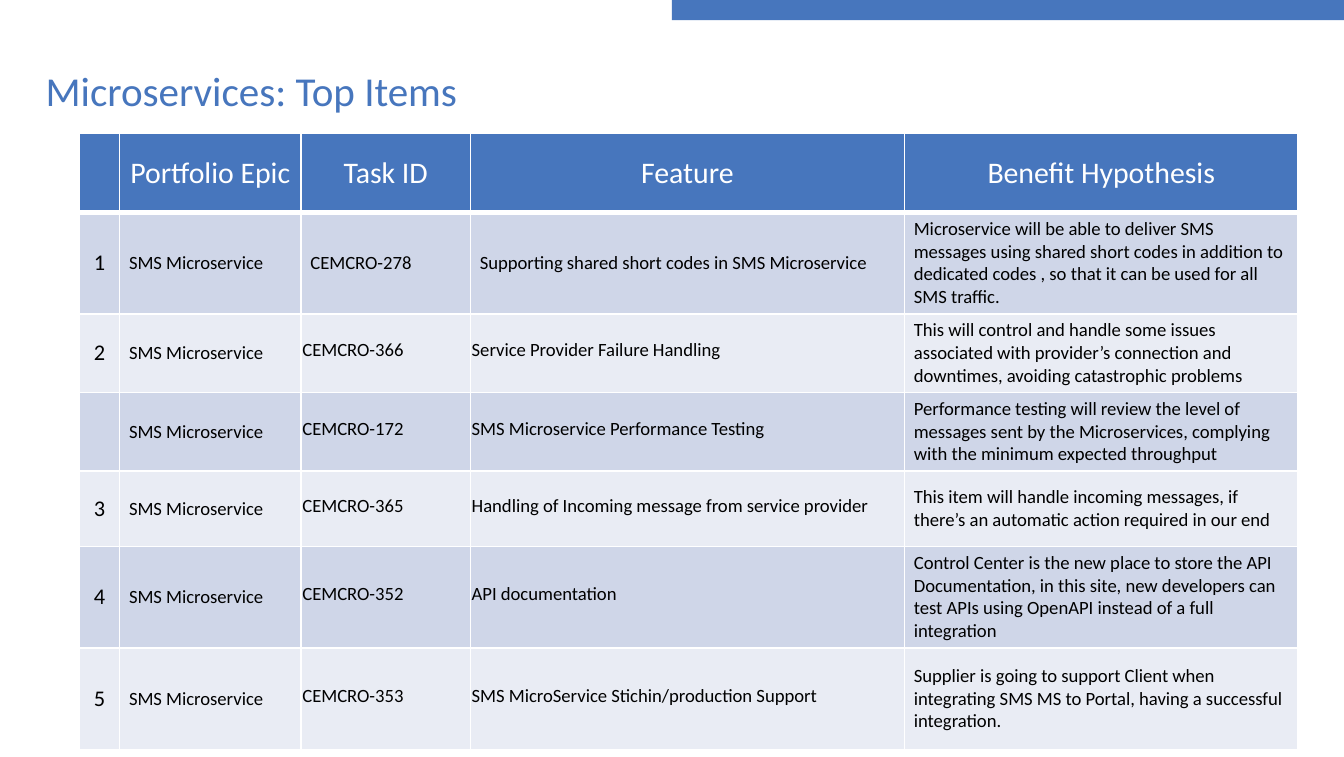
from lxml.etree import SubElement
from pptx import Presentation
from pptx.dml.color import RGBColor
from pptx.enum.shapes import MSO_SHAPE as SHAPE
from pptx.enum.text import MSO_ANCHOR as ANCHOR, PP_ALIGN as ALIGN
from pptx.oxml.ns import qn
from pptx.util import Inches, Pt

COLORS = {
    "blue": "4776BD",
    "band_dark": "CFD6E8",
    "band_light": "E9ECF4",
    "white": "FFFFFF",
    "black": "000000",
}
COLUMN_WIDTHS = [0.3, 1.35, 1.26, 3.23, 2.93]
ROW_HEIGHTS = [0.59, 0.56, 0.56, 0.56, 0.56, 0.61, 0.76]
NORMAL_INSETS = (0.07, 0.04, 0.07, 0.04)
TIGHT_INSETS = (0.01, 0.01, 0.01, 0.05)

EPIC = "SMS Microservice"
HEADER = ["", "Portfolio Epic", "Task ID", "Feature", "Benefit Hypothesis"]
ITEMS = [
    ("1", "CEMCRO-278", "Supporting shared short codes in SMS Microservice",
     "Microservice will be able to deliver SMS messages using shared short codes "
     "in addition to dedicated codes , so that it can be used for all SMS traffic."),
    ("2", "CEMCRO-366", "Service Provider Failure Handling",
     "This will control and handle some issues associated with provider’s "
     "connection and downtimes, avoiding catastrophic problems"),
    ("", "CEMCRO-172", "SMS Microservice Performance Testing",
     "Performance testing will review the level of messages sent by the "
     "Microservices, complying with the minimum expected throughput"),
    ("3", "CEMCRO-365", "Handling of Incoming message from service provider",
     "This item will handle incoming messages, if there’s an automatic action "
     "required in our end"),
    ("4", "CEMCRO-352", "API documentation",
     "Control Center is the new place to store the API Documentation, in this "
     "site, new developers can test APIs using OpenAPI instead of a full integration"),
    ("5", "CEMCRO-353", "SMS MicroService Stichin/production Support",
     "Supplier is going to support Client when integrating SMS MS to Portal, "
     "having a successful integration."),
]


class SlideBuilder:
    font = "Calibri"

    def __init__(self, prs):
        self.slide = prs.slides.add_slide(prs.slide_layouts[5])

    def color(self, name):
        return RGBColor.from_string(COLORS[name])

    def format_text(self, p, size, color, align=ALIGN.LEFT):
        p.alignment = align
        for r in p.runs:
            r.font.name = self.font
            r.font.size = Pt(size)
            r.font.bold = False
            r.font.color.rgb = self.color(color)

    def bar(self, left, top, width, height):
        sp = self.slide.shapes.add_shape(
            SHAPE.RECTANGLE, Inches(left), Inches(top), Inches(width), Inches(height))
        sp.shadow.inherit = False
        sp.fill.solid()
        sp.fill.fore_color.rgb = self.color("blue")
        sp.line.fill.background()

    def title(self, text, left, top, width, height):
        sp = self.slide.shapes.title
        sp.left, sp.top = Inches(left), Inches(top)
        sp.width, sp.height = Inches(width), Inches(height)
        tf = sp.text_frame
        tf.text = text
        tf.word_wrap = True
        tf.vertical_anchor = ANCHOR.BOTTOM
        tf.margin_left = tf.margin_top = tf.margin_right = tf.margin_bottom = 0
        p = tf.paragraphs[0]
        p.line_spacing = 0.9
        self.format_text(p, 22, "blue")

    def borders(self, cell, top, bottom):
        tc_pr = cell._tc.get_or_add_tcPr()
        for side, width in (("L", 1), ("R", 1), ("T", top), ("B", bottom)):
            ln = SubElement(tc_pr, qn(f"a:ln{side}"), w=str(Pt(width)))
            fill = SubElement(ln, qn("a:solidFill"))
            SubElement(fill, qn("a:srgbClr"), val=COLORS["white"])

    def cell(self, cell, text, row, col):
        self.borders(cell, 3 if row == 1 else 1, 3 if row == 0 else 1)
        cell.fill.solid()
        band = "band_dark" if row % 2 else "band_light"
        cell.fill.fore_color.rgb = self.color(band if row else "blue")
        cell.vertical_anchor = ANCHOR.MIDDLE
        insets = TIGHT_INSETS if row > 1 and col in (2, 3) else NORMAL_INSETS
        (cell.margin_left, cell.margin_top,
         cell.margin_right, cell.margin_bottom) = map(Inches, insets)
        cell.text_frame.text = text
        p = cell.text_frame.paragraphs[0]
        if row == 0:
            self.format_text(p, 16, "white", ALIGN.CENTER)
        elif col == 0:
            self.format_text(p, 12, "black", ALIGN.CENTER)
        else:
            self.format_text(p, 10, "black")

    def table(self, rows, left, top):
        table = self.slide.shapes.add_table(
            len(rows), len(COLUMN_WIDTHS), Inches(left), Inches(top),
            Inches(sum(COLUMN_WIDTHS)), Inches(sum(ROW_HEIGHTS))).table
        for column, width in zip(table.columns, COLUMN_WIDTHS):
            column.width = Inches(width)
        for row, height in zip(table.rows, ROW_HEIGHTS):
            row.height = Inches(height)
        for i, values in enumerate(rows):
            for j, text in enumerate(values):
                self.cell(table.cell(i, j), text, i, j)


def main():
    prs = Presentation()
    prs.slide_width, prs.slide_height = Inches(10), Inches(5.63)
    s = SlideBuilder(prs)
    s.bar(5, 0, 5, 0.15)
    s.title("Microservices: Top Items", 0.34, 0.23, 9.32, 0.63)
    rows = [HEADER] + [[number, EPIC, *rest] for number, *rest in ITEMS]
    s.table(rows, 0.59, 0.99)
    prs.save("out.pptx")


if __name__ == "__main__":
    main()
